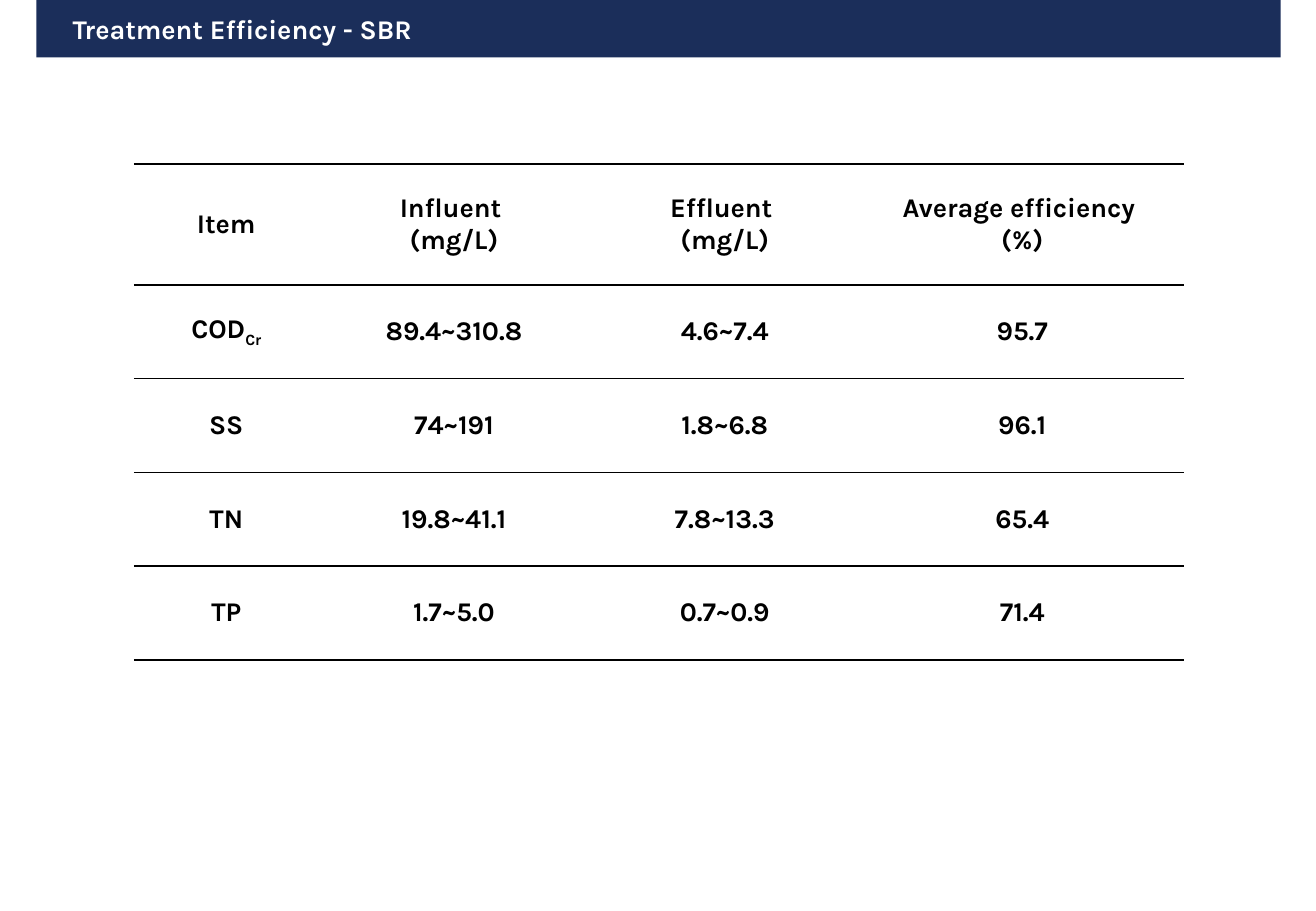
from lxml import etree
from pptx import Presentation
from pptx.dml.color import RGBColor
from pptx.enum import shapes, text
from pptx.oxml import ns
from pptx.util import Cm, Pt

COLOURS = {"navy": "1B2E5A", "white": "FFFFFF", "black": "000000"}
FONT = "Karla"


def style_run(run, colour):
    run.font.name = FONT
    run.font.size = Pt(16)
    run.font.bold = True
    run.font.color.rgb = RGBColor.from_string(COLOURS[colour])


def set_border(cell, position, side, weight):
    line = etree.Element(ns.qn(f"a:{side}"), w=str(Pt(weight)))
    if weight:
        fill = etree.SubElement(line, ns.qn("a:solidFill"))
        etree.SubElement(fill, ns.qn("a:srgbClr"), val=COLOURS["black"])
    else:
        etree.SubElement(line, ns.qn("a:noFill"))
    cell._tc.get_or_add_tcPr().insert(position, line)


prs = Presentation()
prs.slide_width, prs.slide_height = Cm(27.51), Cm(19.05)
slide = prs.slides.add_slide(prs.slide_layouts[5])

header_bar = slide.shapes.add_shape(
    shapes.MSO_SHAPE.RECTANGLE, Cm(0.76), 0, Cm(26.01), Cm(1.2))
header_bar.shadow.inherit = False
header_bar.fill.solid()
header_bar.fill.fore_color.rgb = RGBColor.from_string(COLOURS["navy"])
header_bar.line.fill.background()
slide.shapes._spTree.insert(2, header_bar._element)

heading = slide.shapes.title
heading.left, heading.top, heading.width, heading.height = Cm(1.32), Cm(0.16), Cm(8.1), Cm(0.9)
heading_frame = heading.text_frame
heading_frame.text = "Treatment Efficiency - SBR"
heading_frame.word_wrap = False
heading_frame.auto_size = text.MSO_AUTO_SIZE.SHAPE_TO_FIT_TEXT
heading_frame.vertical_anchor = text.MSO_ANCHOR.MIDDLE
heading_frame.margin_left = heading_frame.margin_right = Cm(0.2)
heading_frame.margin_top = heading_frame.margin_bottom = Cm(0.1)
heading_frame.paragraphs[0].alignment = text.PP_ALIGN.LEFT
style_run(heading_frame.paragraphs[0].runs[0], "white")

results = [
    ["Item", "Influent \n(mg/L)", "Effluent \n(mg/L)", "Average efficiency \n(%)"],
    ["COD", "89.4~310.8", "4.6~7.4", "95.7"],
    ["SS", "74~191", "1.8~6.8", "96.1"],
    ["TN", "19.8~41.1", "7.8~13.3", "65.4"],
    ["TP", "1.7~5.0", "0.7~0.9", "71.4"],
]
column_widths = [3.86, 5.66, 5.66, 6.78]
row_heights = [2.53] + [1.96] * 4
rule_weights = [1.5, 1.5, 1, 1, 1, 1.5]

efficiency = slide.shapes.add_table(
    len(results), len(column_widths), Cm(2.8), Cm(3.43),
    Cm(sum(column_widths)), Cm(sum(row_heights))).table
efficiency.first_row = False
efficiency.horz_banding = False
for column, width in zip(efficiency.columns, column_widths):
    column.width = Cm(width)
for row, height in zip(efficiency.rows, row_heights):
    row.height = Cm(height)

for r, values in enumerate(results):
    for c, value in enumerate(values):
        cell = efficiency.cell(r, c)
        cell.text_frame.text = value
        if value == "COD":
            subscript = cell.text_frame.paragraphs[0].add_run()
            subscript.text = "Cr"
            subscript._r.get_or_add_rPr().set("baseline", "-25000")
        for paragraph in cell.text_frame.paragraphs:
            paragraph.alignment = text.PP_ALIGN.CENTER
            for run in paragraph.runs:
                style_run(run, "black")
        cell.vertical_anchor = text.MSO_ANCHOR.MIDDLE
        cell.margin_left = cell.margin_right = Cm(0.2)
        cell.margin_top = cell.margin_bottom = 0
        cell.fill.background()
        borders = {"lnL": 0, "lnR": 0, "lnT": rule_weights[r], "lnB": rule_weights[r + 1]}
        for position, (side, weight) in enumerate(borders.items()):
            set_border(cell, position, side, weight)

prs.save("out.pptx")
